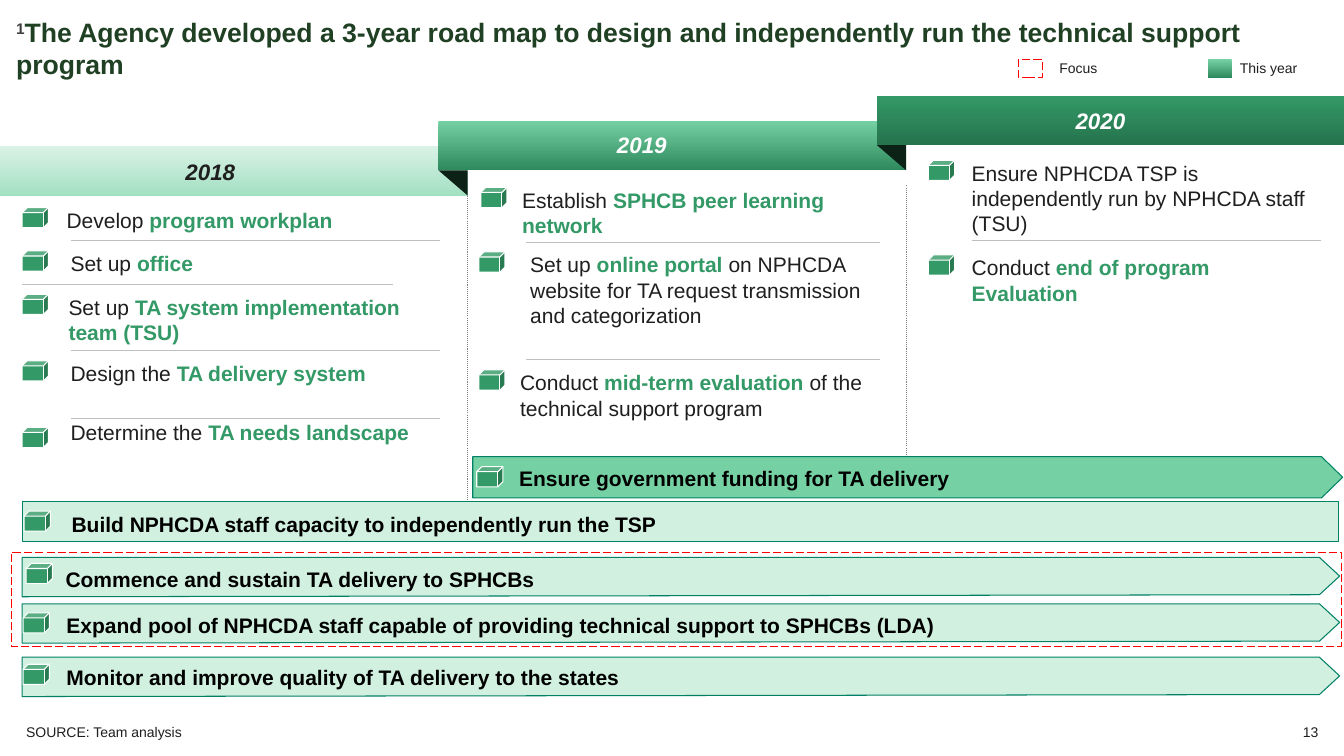
from lxml.etree import SubElement
from pptx import Presentation
from pptx.dml.color import RGBColor
from pptx.enum.dml import MSO_LINE as DASH
from pptx.enum.shapes import MSO_CONNECTOR as CONN, MSO_SHAPE as SHAPE
from pptx.enum.text import MSO_ANCHOR as ANCHOR, MSO_AUTO_SIZE as FIT, PP_ALIGN as ALIGN
from pptx.oxml.ns import qn
from pptx.util import Inches, Pt

CELL = Inches(0.1)
COLS, ROWS = 133.33, 75
FONT = "Arial"
INK = RGBColor(0x1F, 0x1F, 0x1F)
BLACK = RGBColor(0, 0, 0)
WHITE = RGBColor(0xFF, 0xFF, 0xFF)
GREY = RGBColor(0x40, 0x40, 0x40)
DOTS = RGBColor(0x80, 0x80, 0x80)
RULE = RGBColor(0xBF, 0xBF, 0xBF)
RED = RGBColor(0xFF, 0, 0)
FOREST = RGBColor(0x20, 0x40, 0x24)
FOLD = RGBColor(0x0C, 0x22, 0x17)
GREEN = RGBColor(0x33, 0x99, 0x66)
EDGE = RGBColor(0x01, 0x80, 0x64)
MINT = RGBColor(0x75, 0xD1, 0xA3)
PALE = RGBColor(0xD1, 0xF0, 0xE0)
FADE_2018 = RGBColor(0xDA, 0xF2, 0xE6), RGBColor(0xA3, 0xE0, 0xC2)
FADE_2019 = MINT, RGBColor(0x2E, 0x89, 0x5C)
FADE_2020 = GREEN, RGBColor(0x26, 0x73, 0x4D)


class RoadMap:
    """Draws styled elements on one slide, measured in grid cells."""

    def __init__(self, prs):
        self.s = prs.slides.add_slide(prs.slide_layouts[5])

    def box(self, *cells):
        return [round(c * CELL) for c in cells]

    def run(self, p, text, size, color, bold=False, italic=False):
        r = p.add_run()
        r.text = text
        r.font.name, r.font.size = FONT, Pt(size)
        r.font.bold, r.font.italic = bold, italic
        r.font.color.rgb = color
        return r

    def frame(self, tf, margins=(0, 0, 0, 0), anchor=ANCHOR.TOP, wrap=True, align=ALIGN.LEFT):
        tf.auto_size, tf.word_wrap, tf.vertical_anchor = FIT.NONE, wrap, anchor
        tf.margin_left, tf.margin_top, tf.margin_right, tf.margin_bottom = self.box(*margins)
        p = tf.paragraphs[0]
        p.alignment = align
        return p

    def title(self, mark, text):
        sp = self.s.shapes.title
        sp.left, sp.top, sp.width, sp.height = self.box(0, 0, 132.9, 8)
        p = self.frame(sp.text_frame, (1.6, 1.6, 1.6, 0))
        r = self.run(p, mark, 19, GREY, True)
        r.font._element.set("baseline", "30000")
        self.run(p, text, 19, FOREST, True)

    def text(self, x, y, w, h, *runs, **layout):
        sp = self.s.shapes.add_textbox(*self.box(x, y, w, h))
        p = self.frame(sp.text_frame, **layout)
        for run in runs:
            self.run(p, *run)

    def paint(self, sp, fill=None, line=None, dash=None):
        sp.shadow.inherit = False
        if fill is None:
            sp.fill.background()
        elif isinstance(fill, RGBColor):
            sp.fill.solid()
            sp.fill.fore_color.rgb = fill
        else:
            sp.fill.gradient()
            sp.fill.gradient_angle = 270
            for stop, color in zip(sp.fill.gradient_stops, fill):
                stop.color.rgb = color
        if line is None:
            sp.line.fill.background()
        else:
            sp.line.color.rgb, sp.line.width = line, Pt(0.75)
            sp.line.dash_style = dash
        return sp

    def shape(self, kind, x, y, w, h, *style):
        return self.paint(self.s.shapes.add_shape(kind, *self.box(x, y, w, h)), *style)

    def line(self, x1, y1, x2, y2, color, dash=None):
        c = self.s.shapes.add_connector(CONN.STRAIGHT, *self.box(x1, y1, x2, y2))
        c.line.color.rgb, c.line.width, c.line.dash_style = color, Pt(0.75), dash
        SubElement(c._element.spPr, qn("a:effectLst"))

    def cube(self, x, y):
        self.shape(SHAPE.CUBE, x, y, 2.6, 2, GREEN, WHITE)

    def item(self, x, y, w, cube_x, cube_y, parts):
        self.cube(cube_x, cube_y)
        runs = [(t, 15, GREEN if i % 2 else INK, i % 2 == 1) for i, t in enumerate(parts)]
        self.text(x, y, w, 5, *runs)

    def year(self, x, y, label, label_x, label_y, fade, color):
        self.shape(SHAPE.RECTANGLE, x, y, 46.4, 4.9, fade)
        if x:
            self.shape(SHAPE.RIGHT_TRIANGLE, x, y + 4.9, 2.9, 2.5, FOLD).rotation = 180
        self.text(label_x, label_y, 8.9, 4.3, (label, 16, color, True, True),
                  margins=(0.8,) * 4, anchor=ANCHOR.MIDDLE)

    def bar(self, x, y, right, h, tip, slope, fill, cube, label, text):
        low = y + h - slope
        points = [(right - tip, y), (right, (y + low) / 2), (right - tip, low), (x, y + h)]
        fb = self.s.shapes.build_freeform(*self.box(x, y))
        fb.add_line_segments([self.box(*pt) for pt in points])
        self.paint(fb.convert_to_shape(), fill, EDGE)
        self.cube(*cube)
        self.text(*label, 122 - label[0], 2.5, (text, 15, BLACK, True))

    def legend(self, x, text_x, text, *style):
        self.shape(SHAPE.RECTANGLE, x, 5.9, 2.4, 1.8, *style)
        self.text(text_x, 5.9, 7.8, 1.7, (text, 10, INK), wrap=False)


YEARS = [
    (0, 14.5, "2018", 17.6, 14.9, FADE_2018, INK),
    (43.5, 12, "2019", 60.4, 12.2, FADE_2019, WHITE),
    (87, 9.5, "2020", 105.9, 9.8, FADE_2020, WHITE),
]
ITEMS = [
    (6.6, 20.6, 33.8, 2.2, 20.6, ["Develop ", "program workplan"]),
    (7, 24.9, 33.8, 2.2, 24.9, ["Set up ", "office"]),
    (6.8, 29.2, 33.8, 2.2, 29.2, ["Set up ", "TA system implementation team (TSU)"]),
    (7, 35.8, 33.8, 2.2, 35.8, ["Design the ", "TA delivery system"]),
    (7, 41.6, 33.8, 2.2, 42.4, ["Determine the", " TA needs landscape"]),
    (51.8, 18.6, 35.6, 47.7, 18.6, ["Establish", " SPHCB peer learning network"]),
    (52.6, 25, 35.6, 47.5, 25, ["Set up ", "online portal ",
     "on NPHCDA website for TA request transmission and categorization"]),
    (51.6, 36.7, 35.6, 47.5, 36.7, ["Conduct ", "mid-term evaluation ",
     "of the technical support program"]),
    (96.4, 15.9, 34.6, 92.1, 15.9,
     ["Ensure NPHCDA TSP is independently run by NPHCDA staff (TSU)"]),
    (96.4, 25.3, 34.6, 92.1, 25.3, ["Conduct ", "end of program Evaluation"]),
]
RULES = [
    (7, 43.7, 23.9), (2.2, 39, 28.2), (7, 43.7, 34.8), (7, 43.7, 41.5),
    (52.2, 87.3, 24.1), (52.2, 87.3, 35.7), (96.4, 131.1, 23.9),
]
BARS = [
    (46.9, 45.3, 133.2, 4.1, 2.1, 0, MINT, (47.3, 46.3), (51.5, 46.2),
     "Ensure government funding for TA delivery"),
    (2.2, 49.8, 132.8, 3.9, 0, 0, PALE, (2.4, 50.7), (7.1, 50.7),
     "Build NPHCDA staff capacity to independently run the TSP"),
    (2.2, 55.3, 132.9, 3.9, 2, 0.2, PALE, (2.6, 55.9), (6.5, 56.2),
     "Commence and sustain TA delivery to SPHCBs"),
    (2.2, 59.9, 132.9, 3.9, 2, 0.2, PALE, (2.3, 60.8), (6.6, 60.8),
     "Expand pool of NPHCDA staff capable of providing technical support to SPHCBs (LDA)"),
    (2.2, 65.2, 132.9, 3.9, 2, 0.2, PALE, (2.3, 65.9), (6.6, 65.9),
     "Monitor and improve quality of TA delivery to the states"),
]


def main():
    prs = Presentation()
    prs.slide_width, prs.slide_height = round(COLS * CELL), ROWS * CELL
    page = RoadMap(prs)
    page.title("1", "The Agency developed a 3-year road map to design and "
                    "independently run the technical support program")
    for x, bottom in ((46.4, 50.4), (89.9, 48.4)):
        page.line(x, 18.4, x, bottom, DOTS, DASH.ROUND_DOT)
    for year in YEARS:
        page.year(*year)
    for item in ITEMS:
        page.item(*item)
    for bar in BARS:
        page.bar(*bar)
    for left, right, y in RULES:
        page.line(left, y, right, y, RULE)
    page.shape(SHAPE.RECTANGLE, 1.1, 54.8, 132, 9.3, None, RED, DASH.LONG_DASH)
    page.legend(101, 105.1, "Focus", None, RED, DASH.LONG_DASH)
    page.legend(119.8, 123, "This year", FADE_2019)
    page.text(2.6, 71.8, 122.9, 1.7, ("SOURCE: Team analysis", 10, INK), anchor=ANCHOR.MIDDLE)
    page.text(127.8, 71.8, 3, 1.7, ("13", 10, INK), anchor=ANCHOR.MIDDLE, align=ALIGN.RIGHT)
    prs.save("out.pptx")


if __name__ == "__main__":
    main()
